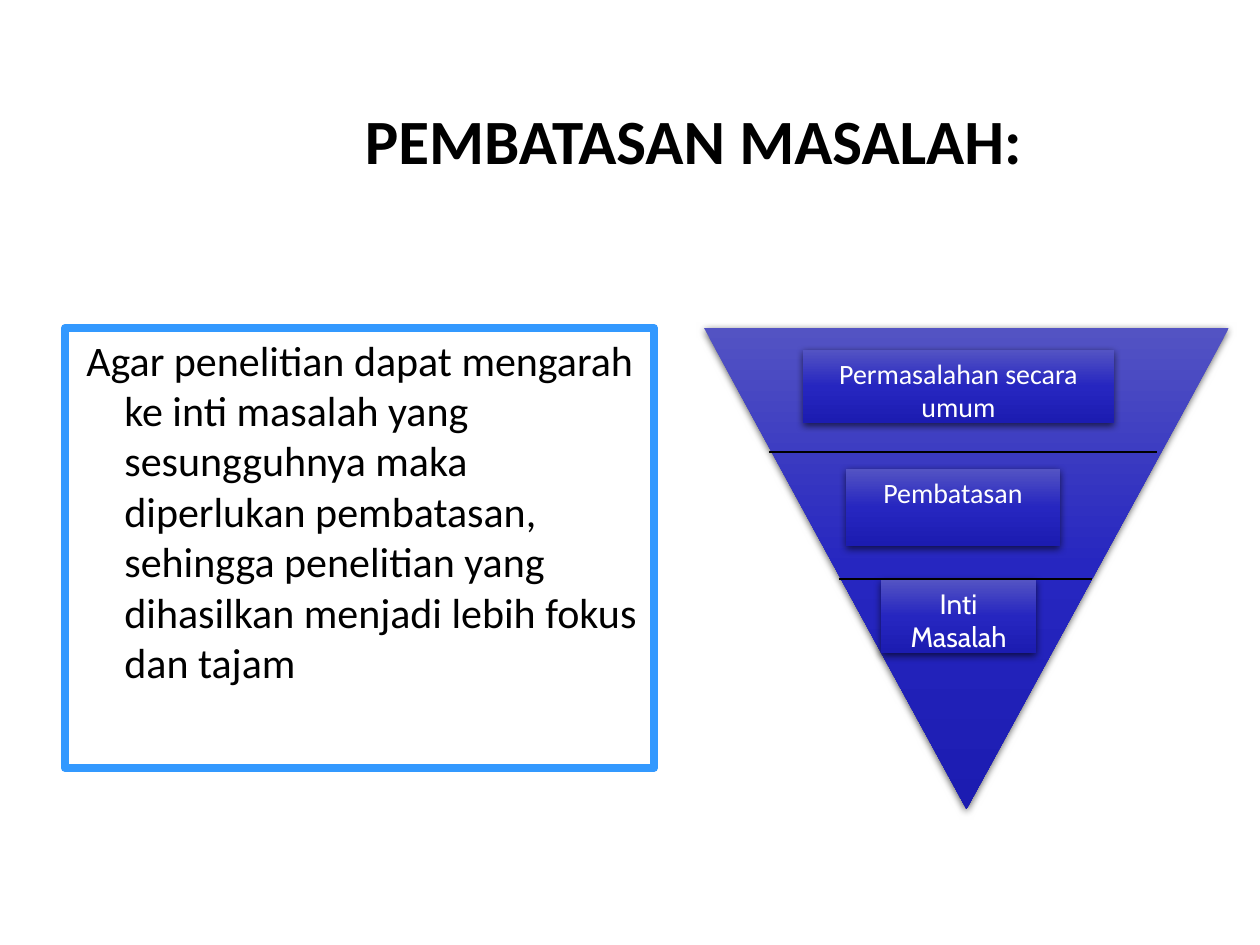
from dataclasses import dataclass

import lxml.etree
import pptx
import pptx.dml.color
import pptx.enum.shapes
import pptx.enum.text
import pptx.oxml.ns
import pptx.util

EMU_PER_PX = 914400 / 126
BLACK, WHITE, FRAME_BLUE = "000000", "FFFFFF", "3399FF"
FUNNEL_STOPS = ((0, "5353C3"), (50, "2626C0"), (100, "1C1CB1"))
SHAPES = pptx.enum.shapes.MSO_SHAPE
ALIGN = pptx.enum.text.PP_ALIGN
ANCHOR = pptx.enum.text.MSO_ANCHOR


@dataclass(frozen=True)
class Box:
    left: int
    top: int
    width: int
    height: int

    def emu(self) -> list:
        return [px(v) for v in (self.left, self.top, self.width, self.height)]


@dataclass(frozen=True)
class Stage:
    label: str
    box: Box
    font: str = "Calibri"


@dataclass(frozen=True)
class Divider:
    left: int
    right: int
    y: int


STAGES = (
    Stage("Permasalahan secara umum", Box(803, 350, 311, 73)),
    Stage("Pembatasan", Box(846, 469, 214, 77)),
    Stage("Inti Masalah", Box(881, 580, 155, 73), "Cabin"),
)
DIVIDERS = (Divider(769, 1157, 452), Divider(839, 1092, 579))


def px(length: int) -> int:
    return pptx.util.Emu(round(length * EMU_PER_PX))


def color(value: str) -> pptx.dml.color.RGBColor:
    return pptx.dml.color.RGBColor.from_string(value)


def add_node(parent, tag: str, **attributes):
    return lxml.etree.SubElement(parent, pptx.oxml.ns.qn(tag), attributes)


def write_text(shape, text: str, *, size: int, fill: str = BLACK, font: str = "Calibri",
               bold: bool = False, align=ALIGN.CENTER, anchor=ANCHOR.TOP,
               margin: int = 0, indent: int = 0) -> None:
    frame = shape.text_frame
    frame.word_wrap = True
    frame.vertical_anchor = anchor
    paragraph = frame.paragraphs[0]
    paragraph.alignment = align
    if margin:
        properties = paragraph._p.get_or_add_pPr()
        properties.set("marL", str(px(margin)))
        properties.set("indent", str(px(indent)))
    run = paragraph.add_run()
    run.text = text
    run.font.size = pptx.util.Pt(size)
    run.font.name = font
    run.font.bold = bold
    run.font.color.rgb = color(fill)


def add_funnel_part(slide, kind, box: Box):
    part = slide.shapes.add_shape(kind, *box.emu())
    part.line.fill.background()
    part.fill.gradient()
    part.fill.gradient_angle = 270
    properties = part._element.spPr
    stops = properties.find(".//" + pptx.oxml.ns.qn("a:gsLst"))
    for stop in list(stops):
        stops.remove(stop)
    for position, value in FUNNEL_STOPS:
        stop = add_node(stops, "a:gs", pos=str(position * 1000))
        add_node(stop, "a:srgbClr", val=value)
    part.shadow.inherit = False
    effects = properties.find(pptx.oxml.ns.qn("a:effectLst"))
    shadow = add_node(effects, "a:outerShdw", blurRad=str(pptx.util.Pt(4.5)),
                      dist=str(pptx.util.Pt(1.5)), dir="5400000", rotWithShape="0")
    add_node(add_node(shadow, "a:srgbClr", val=BLACK), "a:alpha", val="63000")
    return part


def add_divider(slide, divider: Divider) -> None:
    y = px(divider.y)
    line = slide.shapes.add_connector(pptx.enum.shapes.MSO_CONNECTOR.STRAIGHT,
                                      px(divider.left), y, px(divider.right), y)
    line.line.color.rgb = color(BLACK)
    line.line.width = pptx.util.Pt(0.75)
    add_node(line._element.spPr, "a:effectLst")


def main() -> None:
    deck = pptx.Presentation()
    deck.slide_width, deck.slide_height = px(1260), px(945)
    slide = deck.slides.add_slide(deck.slide_layouts[6])

    title = slide.shapes.add_textbox(*Box(158, 74, 1071, 130).emu())
    write_text(title, "PEMBATASAN MASALAH:", size=36, bold=True, anchor=ANCHOR.MIDDLE)

    reason = slide.shapes.add_shape(SHAPES.RECTANGLE, *Box(65, 328, 589, 440).emu())
    reason.shadow.inherit = False
    reason.fill.background()
    reason.line.color.rgb = color(FRAME_BLUE)
    reason.line.width = pptx.util.Pt(4.5)
    write_text(reason, "Agar penelitian dapat mengarah ke inti masalah yang sesungguhnya maka "
               "diperlukan pembatasan, sehingga penelitian yang dihasilkan menjadi lebih "
               "fokus dan tajam", size=24, align=ALIGN.LEFT, margin=47, indent=-38)

    add_funnel_part(slide, SHAPES.FLOWCHART_MERGE, Box(704, 328, 525, 481))
    for stage in STAGES:
        part = add_funnel_part(slide, SHAPES.RECTANGLE, stage.box)
        write_text(part, stage.label, size=16, fill=WHITE, font=stage.font)
    for divider in DIVIDERS:
        add_divider(slide, divider)

    deck.save("out.pptx")


if __name__ == "__main__":
    main()
